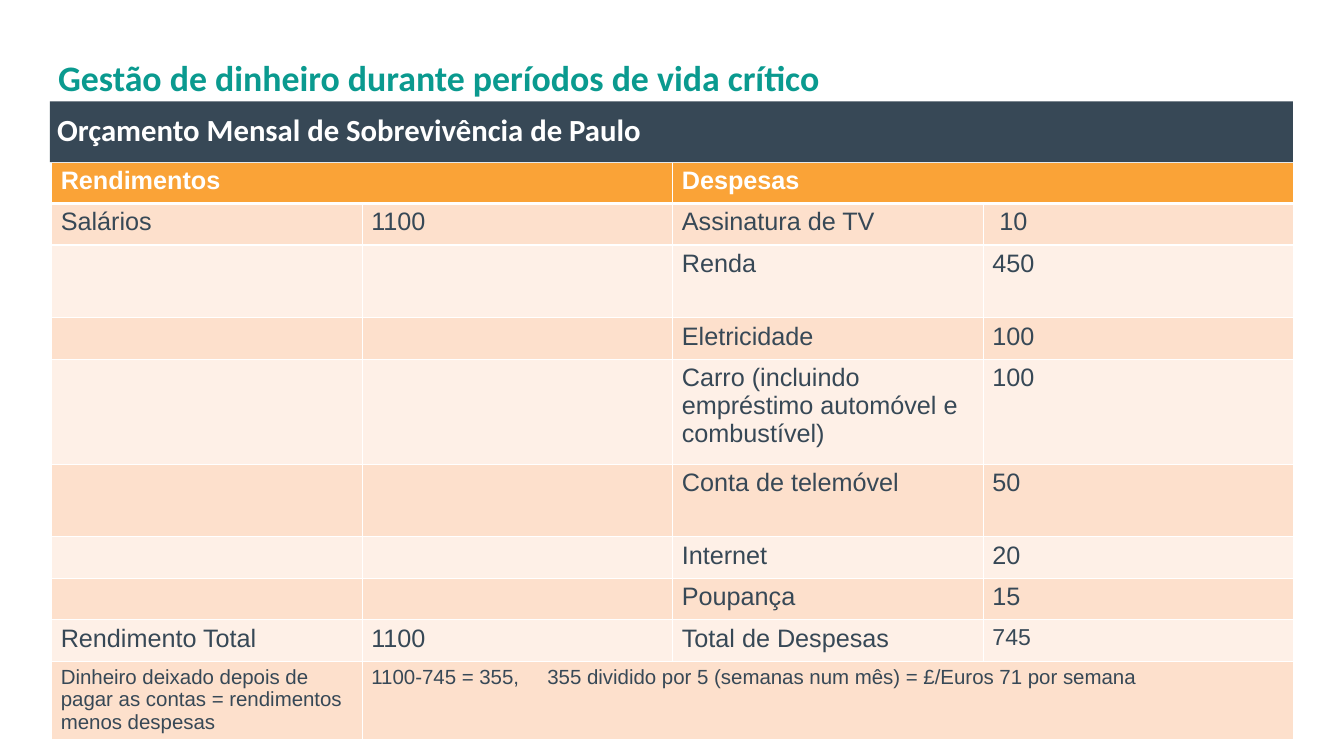
"""Build the monthly survival budget slide."""
import dataclasses

import lxml.etree
import pptx
import pptx.dml.color
import pptx.enum.text
import pptx.enum.shapes
import pptx.oxml.ns
import pptx.util

Inches = pptx.util.Inches
Pt = pptx.util.Pt
qn = pptx.oxml.ns.qn
PP_ALIGN = pptx.enum.text.PP_ALIGN
MIDDLE = pptx.enum.text.MSO_ANCHOR.MIDDLE


@dataclasses.dataclass(frozen=True)
class Theme:
    """Colours, fonts and type sizes of the slide."""
    heading_font: str = "Calibri"
    body_font: str = "Arial"
    teal: str = "0A9A8F"
    slate: str = "374856"
    orange: str = "FAA337"
    white: str = "FFFFFF"
    bands: tuple = ("FEF0E7", "FDE0CC")
    title_size: float = 28
    band_size: float = 24
    cell_size: float = 19.7
    total_size: float = 18
    note_size: float = 16


THEME = Theme()
COLUMN_WIDTH = 3.37
ROW_HEIGHTS = [0.45, 0.45, 0.79, 0.45, 1.14, 0.79, 0.45, 0.45, 0.45, 0.85]
ROWS = [
    ["Rendimentos", "", "Despesas", ""],
    ["Salários", "1100", "Assinatura de TV", " 10"],
    ["", "", "Renda", "450"],
    ["", "", "Eletricidade", "100"],
    ["", "", "Carro (incluindo empréstimo automóvel e combustível)", "100"],
    ["", "", "Conta de telemóvel", "50"],
    ["", "", "Internet", "20"],
    ["", "", "Poupança", "15"],
    ["Rendimento Total", "1100", "Total de Despesas", "745"],
    ["Dinheiro deixado depois de pagar as contas = rendimentos menos despesas",
     "1100-745 = 355,\t355 dividido por 5 (semanas num mês) = £/Euros 71 por semana", "", ""],
]
LAST = len(ROWS) - 1
MERGES = [(0, 0, 1), (0, 2, 3), (LAST, 1, 3)]


def rgb(value):
    """Return the colour object for a hex value."""
    return pptx.dml.color.RGBColor.from_string(value)


def add_run(p, text, font, size, color, bold=False):
    """Append one formatted run to a paragraph."""
    r = p.add_run()
    r.text = text
    r.font.name = font
    r.font.size = Pt(size)
    r.font.bold = bold
    r.font.color.rgb = rgb(color)


def set_heading(shape, text, size, color, align):
    """Write a bold, vertically centred heading into a shape."""
    tf = shape.text_frame
    tf.word_wrap = True
    tf.auto_size = pptx.enum.text.MSO_AUTO_SIZE.NONE
    tf.vertical_anchor = MIDDLE
    tf.margin_left = tf.margin_right = Inches(0.08)
    tf.margin_top = tf.margin_bottom = Inches(0.05)
    p = tf.paragraphs[0]
    p.alignment = align
    p.line_spacing = 0.9
    add_run(p, text, THEME.heading_font, size, color, bold=True)


def set_title(s, text):
    """Place and format the title placeholder."""
    sp = s.shapes.title
    sp.left, sp.top = Inches(0.55), Inches(0.47)
    sp.width, sp.height = Inches(13.48), Inches(0.79)
    set_heading(sp, text, THEME.title_size, THEME.teal, PP_ALIGN.LEFT)


def add_band(s, text):
    """Add the dark band that heads the table."""
    sp = s.shapes.add_shape(pptx.enum.shapes.MSO_SHAPE.RECTANGLE,
                            Inches(0.54), Inches(1.1), Inches(13.49), Inches(0.66))
    sp.shadow.inherit = False
    sp.fill.solid()
    sp.fill.fore_color.rgb = rgb(THEME.slate)
    sp.line.fill.background()
    set_heading(sp, text, THEME.band_size, THEME.white, PP_ALIGN.JUSTIFY)


def set_borders(cell, bottom):
    """Draw white borders around a cell, with its own bottom width."""
    tcPr = cell._tc.get_or_add_tcPr()
    widths = {"a:lnL": 1, "a:lnR": 1, "a:lnT": 1, "a:lnB": bottom}
    for i, (tag, width) in enumerate(widths.items()):
        ln = lxml.etree.Element(qn(tag), w=str(Pt(width)))
        fill = lxml.etree.SubElement(ln, qn("a:solidFill"))
        lxml.etree.SubElement(fill, qn("a:srgbClr"), val=THEME.white)
        tcPr.insert(i, ln)


def add_tab_stop(p, position):
    """Add a left tab stop to a paragraph."""
    tabs = lxml.etree.SubElement(p._p.get_or_add_pPr(), qn("a:tabLst"))
    lxml.etree.SubElement(tabs, qn("a:tab"), pos=str(position), algn="l")


def cell_size(row, col):
    """Return the type size for a table cell."""
    if row == LAST:
        return THEME.note_size
    if (row, col) == (LAST - 1, 3):
        return THEME.total_size
    return THEME.cell_size


def fill_cell(cell, row, col, text):
    """Fill, border and write one table cell."""
    header = row == 0
    cell.fill.solid()
    cell.fill.fore_color.rgb = rgb(THEME.orange if header else THEME.bands[row % 2])
    set_borders(cell, 3 if header else 1)
    cell.margin_left = cell.margin_right = Inches(0.1)
    cell.margin_top = cell.margin_bottom = Inches(0.05)
    if text:
        p = cell.text_frame.paragraphs[0]
        if "\t" in text:
            add_tab_stop(p, Inches(1.91))
        add_run(p, text, THEME.body_font, cell_size(row, col),
                THEME.white if header else THEME.slate, bold=header)


def add_budget_table(s):
    """Add the table of income and expenses."""
    columns = len(ROWS[0])
    frame = s.shapes.add_table(len(ROWS), columns, Inches(0.56), Inches(1.76),
                               Inches(COLUMN_WIDTH * columns), Inches(sum(ROW_HEIGHTS)))
    table = frame.table
    table.horz_banding = False
    for column in table.columns:
        column.width = Inches(COLUMN_WIDTH)
    for row, height in enumerate(ROW_HEIGHTS):
        table.rows[row].height = Inches(height)
        for col, text in enumerate(ROWS[row]):
            fill_cell(table.cell(row, col), row, col, text)
    for row, first, last in MERGES:
        table.cell(row, first).merge(table.cell(row, last))


def main():
    """Build and save the slide."""
    prs = pptx.Presentation()
    prs.slide_width = Pt(1050)
    prs.slide_height = Pt(591)
    s = prs.slides.add_slide(prs.slide_layouts[5])
    add_budget_table(s)
    set_title(s, "Gestão de dinheiro durante períodos de vida crítico")
    add_band(s, "Orçamento Mensal de Sobrevivência de Paulo")
    prs.save("out.pptx")


if __name__ == "__main__":
    main()
